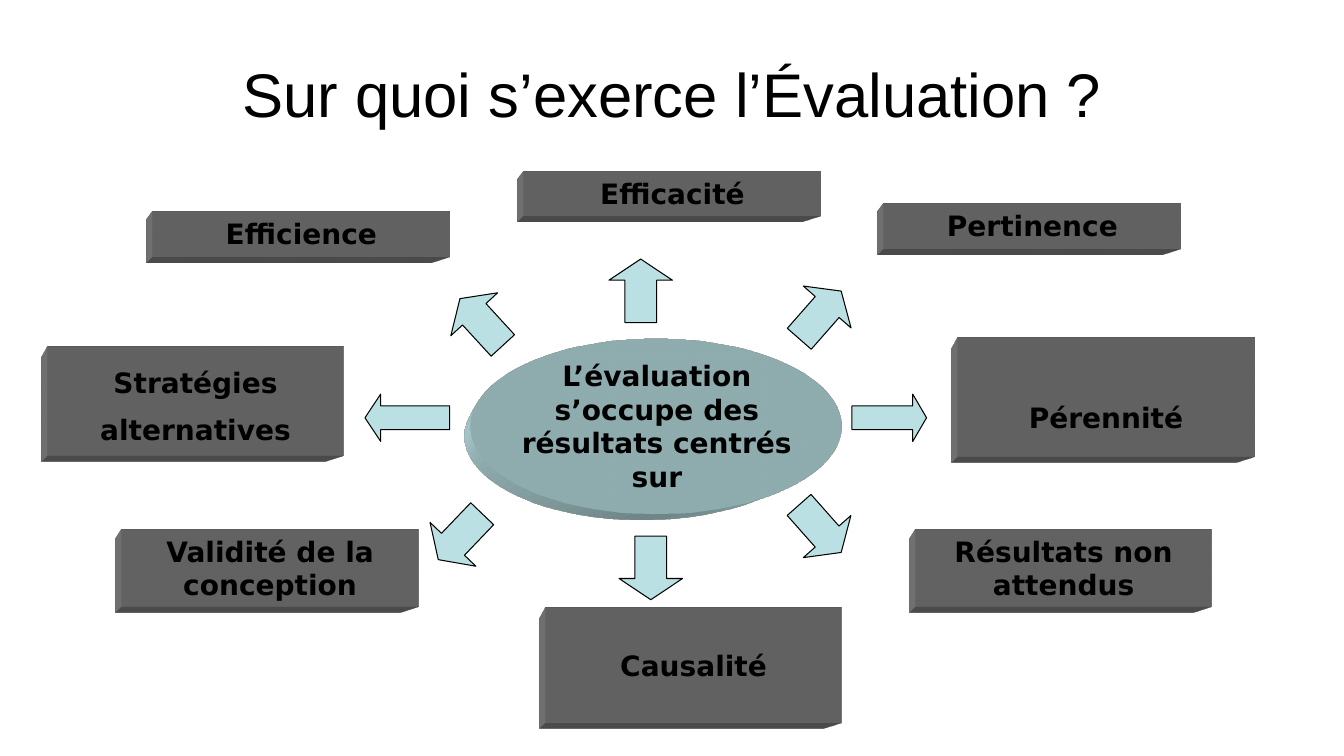
from lxml import etree
from pptx import Presentation
from pptx.dml.color import RGBColor
from pptx.enum.shapes import MSO_SHAPE
from pptx.enum.text import MSO_ANCHOR, PP_ALIGN
from pptx.oxml.ns import qn
from pptx.util import Inches, Pt


def write(shape, text, font="DejaVu Sans", size=20, bold=True, spacing=1.0,
          anchor=MSO_ANCHOR.TOP, top=0.05):
    frame = shape.text_frame
    frame.word_wrap = True
    frame.vertical_anchor = anchor
    frame.margin_top = Inches(top)
    paragraph = frame.paragraphs[0]
    paragraph.alignment = PP_ALIGN.CENTER
    paragraph.line_spacing = spacing
    run = paragraph.add_run()
    run.text = text
    run.font.name = font
    run.font.size = Pt(size)
    run.font.bold = bold
    run.font.color.rgb = RGBColor.from_string("000000")


def add_filled(preset, left, top, width, height, color, solid=False):
    """Add a preset shape without outline; solid gives it depth to the lower left."""
    shape = slide.shapes.add_shape(preset, Inches(left), Inches(top),
                                   Inches(width), Inches(height))
    shape.shadow.inherit = False
    shape.fill.solid()
    shape.fill.fore_color.rgb = RGBColor.from_string(color)
    shape.line.fill.background()
    if solid:
        properties = shape.fill._xPr
        scene = etree.SubElement(properties, qn("a:scene3d"))
        etree.SubElement(scene, qn("a:camera"), prst="legacyPerspectiveBottomLeft")
        etree.SubElement(scene, qn("a:lightRig"), rig="legacyFlat3", dir="t")
        depth = etree.SubElement(properties, qn("a:sp3d"), extrusionH="430200",
                                 prstMaterial="legacyMatte")
        for bevel in ("a:bevelT", "a:bevelB"):
            etree.SubElement(depth, qn(bevel), w="13500", h="13500", prst="angle")
        side_color = etree.SubElement(depth, qn("a:extrusionClr"))
        etree.SubElement(side_color, qn("a:srgbClr"), val=color)
    return shape


deck = Presentation()
deck.slide_width = Inches(13.33)
deck.slide_height = Inches(7.5)
slide = deck.slides.add_slide(deck.slide_layouts[5])

title = slide.shapes.title
title.left, title.top = Inches(0.67), Inches(0.3)
title.width, title.height = Inches(12), Inches(1.25)
write(title, "Sur quoi s’exerce l’Évaluation ?", font="Arial", size=44,
      bold=False, anchor=MSO_ANCHOR.MIDDLE)

# Criteria around the centre: text, left, top, height, format
criteria = [
    ("Efficience", 1.52, 2.1, 0.44, {}),
    ("Stratégies alternatives", 0.47, 3.44, 1.08, {"spacing": 1.4}),
    ("Validité de la conception", 1.21, 5.25, 0.77, {}),
    ("Causalité", 5.41, 6.03, 1.14, {"anchor": MSO_ANCHOR.MIDDLE}),
    ("Efficacité", 5.2, 1.7, 0.44, {}),
    ("Résultats non attendus", 9.08, 5.25, 0.77, {}),
    ("Pertinence", 8.77, 2.02, 0.44, {}),
    ("Pérennité", 9.5, 3.35, 1.18, {"anchor": MSO_ANCHOR.MIDDLE, "top": 0.45}),
]
for criterion, left, top, height, text_format in criteria:
    block = add_filled(MSO_SHAPE.RECTANGLE, left, top, 2.94, height, "808080",
                       solid=True)
    write(block, criterion, **text_format)

# Arrows: preset, left, top, width, height, rotation, head length
arrows = [
    (MSO_SHAPE.UP_ARROW, 4.46, 2.88, 0.63, 0.63, 317.5, 0.334),
    (MSO_SHAPE.UP_ARROW, 6.04, 2.57, 0.63, 0.63, 0, 0.334),
    (MSO_SHAPE.UP_ARROW, 7.82, 2.81, 0.63, 0.63, 41.3, 0.334),
    (MSO_SHAPE.LEFT_ARROW, 3.62, 3.91, 0.84, 0.47, 0, 0.333),
    (MSO_SHAPE.RIGHT_ARROW, 8.45, 3.91, 0.74, 0.47, 0, 0.292),
    (MSO_SHAPE.DOWN_ARROW, 4.25, 5.01, 0.63, 0.63, 43.7, 0.334),
    (MSO_SHAPE.DOWN_ARROW, 6.14, 5.32, 0.63, 0.63, 0, 0.334),
    (MSO_SHAPE.DOWN_ARROW, 7.82, 4.93, 0.63, 0.63, 318.5, 0.334),
]
for preset, left, top, width, height, rotation, head in arrows:
    arrow = add_filled(preset, left, top, width, height, "BBE0E3")
    arrow.rotation = rotation
    arrow.adjustments[0] = 0.5
    arrow.adjustments[1] = head
    arrow.line.color.rgb = RGBColor.from_string("000000")
    arrow.line.width = Pt(0.75)

add_filled(MSO_SHAPE.OVAL, 4.67, 3.36, 3.68, 1.73, "BBE0E3", solid=True)
center_text = slide.shapes.add_textbox(Inches(4.99), Inches(3.51),
                                       Inches(3.05), Inches(1.43))
write(center_text, "L’évaluation s’occupe des résultats centrés sur")

deck.save("out.pptx")
